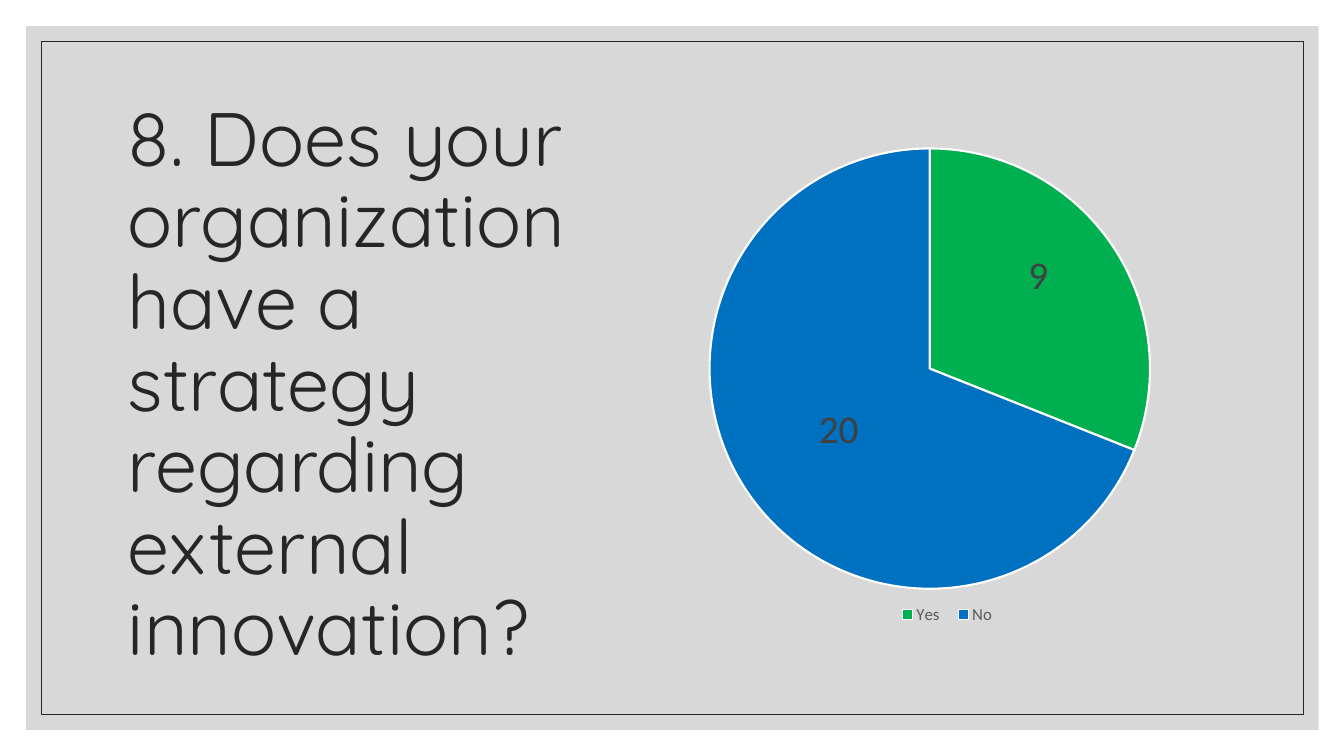
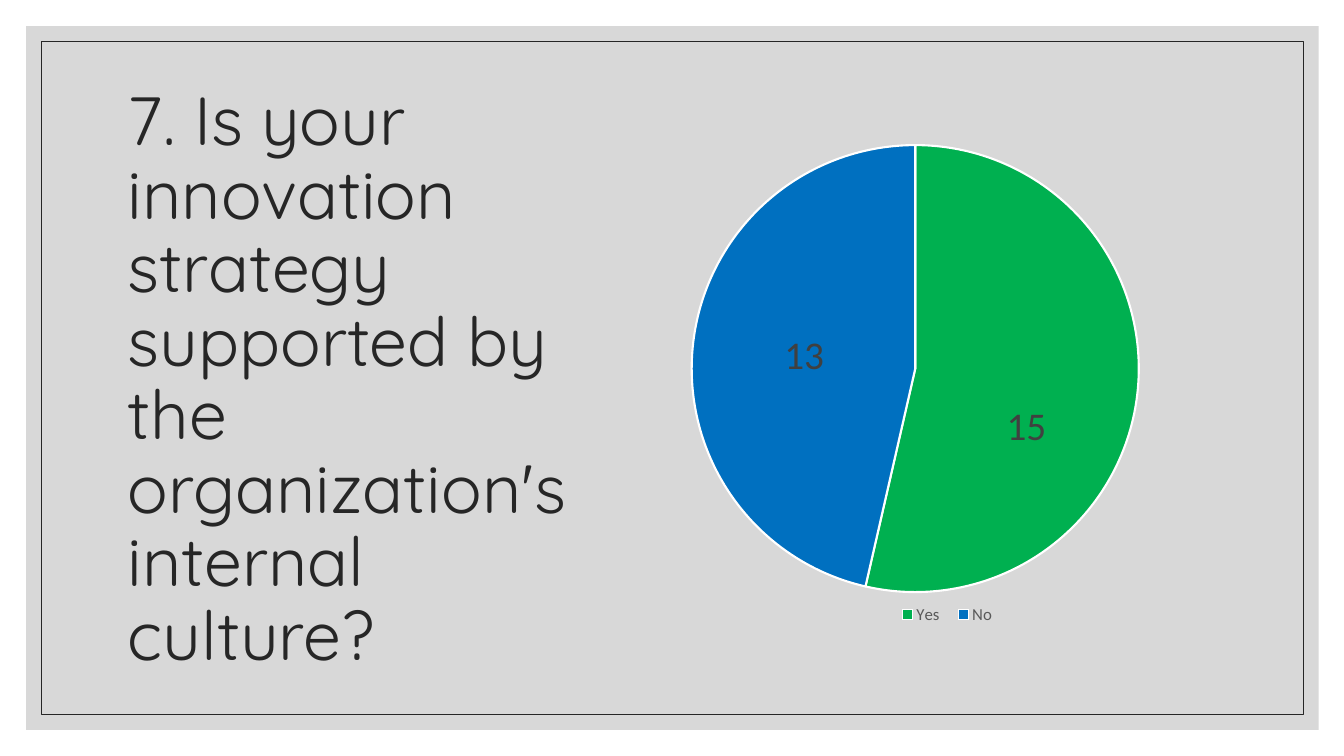
from lxml.etree import SubElement
from pptx import Presentation
from pptx.chart.data import CategoryChartData
from pptx.dml.color import RGBColor
from pptx.enum.chart import XL_CHART_TYPE as ChartType
from pptx.enum.chart import XL_LABEL_POSITION as LabelPosition
from pptx.enum.chart import XL_LEGEND_POSITION as LegendPosition
from pptx.enum.shapes import MSO_SHAPE as Preset
from pptx.enum.text import MSO_ANCHOR as Anchor
from pptx.oxml import parse_xml
from pptx.oxml.ns import nsdecls, qn
from pptx.util import Inches, Pt

SLIDE_SIZE = (Inches(13.33), Inches(7.5))
WHITE, INK, GREY = "FFFFFF", "262626", "BFBFBF"
ANSWERS = {"Yes": "00B050", "No": "0070C0"}
TITLE = {"name": "Quicksand", "color": INK}
LABEL = {"name": "Calibri", "size": 28, "color": "404040"}
LEGEND = {"name": "Calibri", "size": 12, "color": "595959"}

PANEL_BOX = (1.95, 3.47, 96.17, 93.07)
BORDER_BOX = (3.08, 5.47, 93.92, 89.07)
CHART_BOX = (48.01, 16.93, 43.21, 67.73)
LEGEND_AREA = {"x": 0.42, "y": 0.92, "w": 0.2, "h": 0.06}

QUESTIONS = [
    {
        "text": "8. Does your organization have a strategy regarding\vexternal innovation?",
        "size": 54,
        "box": (8.78, 9.33, 35.86, 83.6),
        "values": (9, 20),
        "pie_area": {"x": 0.11, "y": 0.04, "w": 0.76, "h": 0.86},
        "yes_shift": {"x": 0.03, "y": -0.06},
    },
    {
        "text": "7. Is your innovation strategy supported by the organization's internal culture?",
        "size": 48.6,
        "box": (8.78, 9.33, 36.38, 82.13),
        "values": (15, 13),
        "pie_area": {"x": 0.08, "y": 0.03, "w": 0.77, "h": 0.88},
        "yes_shift": {"x": 0, "y": 0.09},
    },
]


def color(hex_value):
    return RGBColor.from_string(hex_value)


def place(box):
    return [round(share / 100 * SLIDE_SIZE[i % 2]) for i, share in enumerate(box)]


def paint(fill, hex_value):
    fill.solid()
    fill.fore_color.rgb = color(hex_value)


def style_font(font, formats):
    for name, value in formats.items():
        if name == "color":
            font.color.rgb = color(value)
        else:
            setattr(font, name, Pt(value) if name == "size" else value)


def manual_layout(area, edges=False):
    layout = parse_xml(f"<c:layout {nsdecls('c')}><c:manualLayout/></c:layout>")
    values = dict(area)
    if edges:
        values = {"xMode": "edge", "yMode": "edge", **values}
    for name, value in values.items():
        SubElement(layout[0], qn(f"c:{name}")).set("val", str(value))
    return layout


def set_layout(parent, layout, after=None):
    for old in parent.findall(qn("c:layout")):
        parent.remove(old)
    if after is None:
        parent.insert(0, layout)
    else:
        parent.find(qn(after)).addnext(layout)


def add_frame(slide):
    panel, border = [
        slide.shapes.add_shape(Preset.RECTANGLE, *place(box))
        for box in (PANEL_BOX, BORDER_BOX)
    ]
    for shape in (panel, border):
        shape.shadow.inherit = False
    paint(panel.fill, GREY)
    panel.line.fill.background()
    panel_color = panel.fill.fore_color.rgb and panel.element.spPr.find(
        f"{qn('a:solidFill')}/{qn('a:srgbClr')}"
    )
    SubElement(panel_color, qn("a:alpha")).set("val", "60000")
    border.fill.background()
    paint(border.line.fill, INK)
    border.line.width = Pt(0.5)


def add_title(slide, box, text, size):
    frame = slide.shapes.add_textbox(*place(box)).text_frame
    frame.word_wrap = True
    frame.vertical_anchor = Anchor.MIDDLE
    paragraph = frame.paragraphs[0]
    paragraph.text = text
    paragraph.line_spacing = 0.9
    for run in paragraph.runs:
        style_font(run.font, {**TITLE, "size": size})


def add_pie(slide, box, values, pie_area, yes_shift):
    data = CategoryChartData()
    data.categories = list(ANSWERS)
    data.add_series("Series 1", values)
    chart = slide.shapes.add_chart(ChartType.PIE, *place(box), data).chart
    style_font(chart.font, {"name": "Calibri", "size": 10, "color": "000000"})
    chart.has_title = False
    chart.has_legend = True
    chart.legend.position = LegendPosition.BOTTOM
    chart.legend.include_in_layout = False
    style_font(chart.legend.font, LEGEND)

    plot = chart.plots[0]
    plot.vary_by_categories = True
    series = plot.series[0]
    for index, hex_value in enumerate(ANSWERS.values()):
        point = series.points[index]
        paint(point.format.fill, hex_value)
        paint(point.format.line.fill, WHITE)
        point.format.line.width = Pt(1.5)
        style_font(point.data_label.font, LABEL)
        point.data_label.position = LabelPosition.CENTER

    pie_layout = manual_layout(pie_area, edges=True)
    pie_layout[0].insert(0, pie_layout.makeelement(qn("c:layoutTarget"), {"val": "inner"}))
    set_layout(chart.element.xpath(".//c:plotArea")[0], pie_layout)
    set_layout(chart.legend.element if hasattr(chart.legend, "element")
               else chart.element.xpath(".//c:legend")[0],
               manual_layout(LEGEND_AREA, edges=True), "c:legendPos")
    set_layout(chart.element.xpath(".//c:dLbl")[0], manual_layout(yes_shift), "c:idx")


def add_question(presentation, question):
    slide = presentation.slides.add_slide(presentation.slide_layouts[6])
    add_frame(slide)
    add_title(slide, question["box"], question["text"], question["size"])
    add_pie(slide, CHART_BOX, question["values"], question["pie_area"], question["yes_shift"])


def main():
    presentation = Presentation()
    presentation.slide_width, presentation.slide_height = SLIDE_SIZE
    for question in QUESTIONS:
        add_question(presentation, question)
    presentation.save("out.pptx")


if __name__ == "__main__":
    main()
